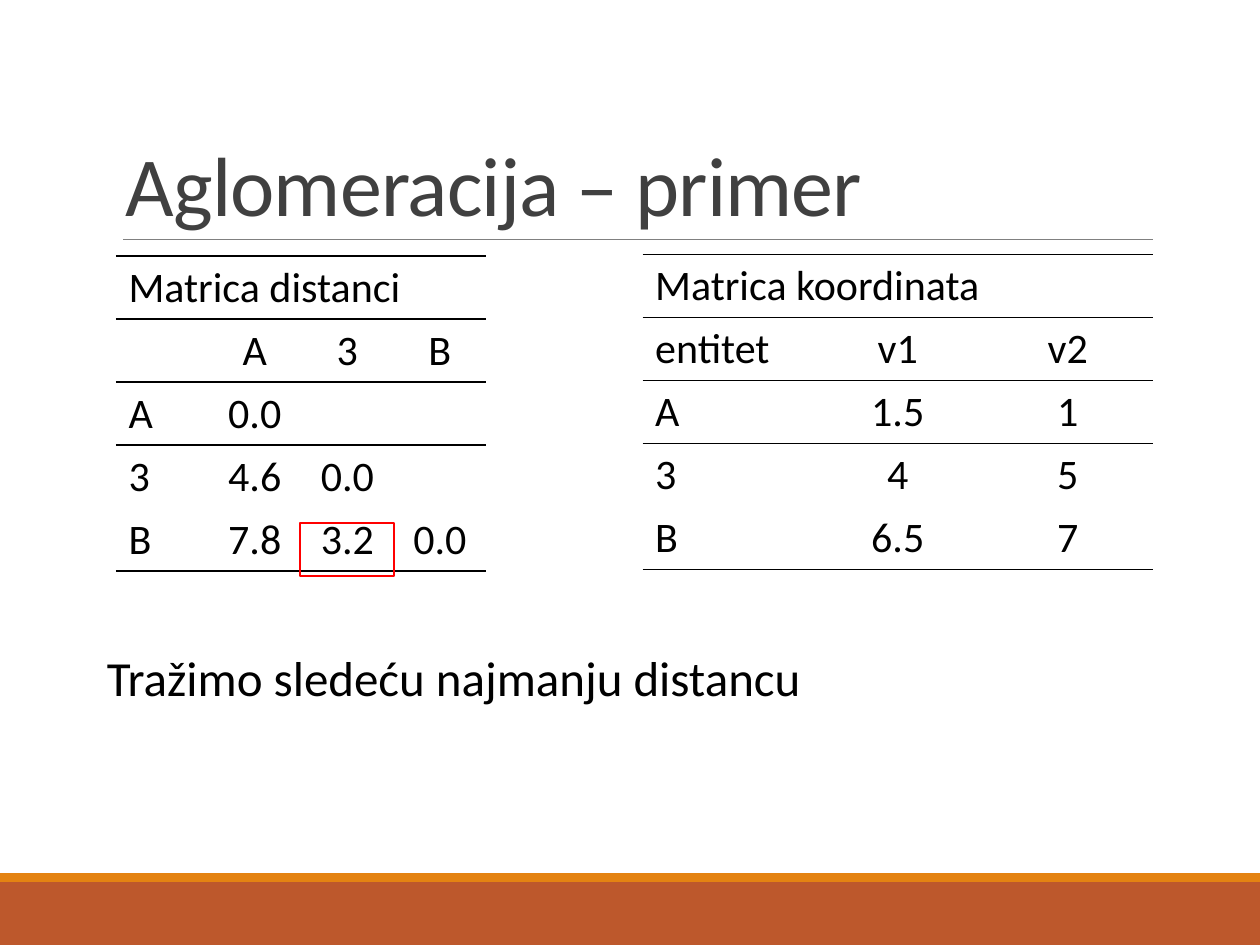
from lxml.etree import Element, SubElement
from pptx import Presentation
from pptx.dml.color import RGBColor
from pptx.enum.shapes import MSO_CONNECTOR, MSO_SHAPE
from pptx.enum.text import MSO_ANCHOR, MSO_AUTO_SIZE, PP_ALIGN
from pptx.oxml.ns import qn
from pptx.util import Inches, Pt

COLORS = {
    "text": "000000",
    "title": "404040",
    "rule": "808080",
    "band": "BD582C",
    "stripe": "E48312",
    "highlight": "FF0000",
}
FONT = "Calibri"
RULED_EDGES = {0, 1, 2, 3, 5}

DISTANCES = [
    ["Matrica distanci", "", "", ""],
    ["", "A", "3", "B"],
    ["A", "0.0", "", ""],
    ["3", "4.6", "0.0", ""],
    ["B", "7.8", "3.2", "0.0"],
]
COORDINATES = [
    ["Matrica koordinata", "", ""],
    ["entitet", "v1", "v2"],
    ["A", "1.5", "1"],
    ["3", "4", "5"],
    ["B", "6.5", "7"],
]


class SlideBuilder:
    def __init__(self, presentation):
        self.width = presentation.slide_width
        self.height = presentation.slide_height
        self.slide = presentation.slides.add_slide(presentation.slide_layouts[6])

    def place(self, left, top, width, height):
        across, down = self.width / 100, self.height / 100
        return [round(value) for value in (left * across, top * down, width * across, height * down)]

    def color(self, name):
        return RGBColor.from_string(COLORS[name])

    def add_text(self, paragraph, text, size, color="text"):
        run = paragraph.add_run()
        run.text = text
        run.font.name = FONT
        run.font.size = Pt(size)
        run.font.color.rgb = self.color(color)
        return run

    def rectangle(self, box, fill=None, line=None):
        shape = self.slide.shapes.add_shape(MSO_SHAPE.RECTANGLE, *self.place(*box))
        shape.shadow.inherit = False
        if fill:
            shape.fill.solid()
            shape.fill.fore_color.rgb = self.color(fill)
        else:
            shape.fill.background()
        if line:
            shape.line.color.rgb = self.color(line)
            shape.line.width = Pt(1.25)
        else:
            shape.line.fill.background()

    def rule(self, left, top, width):
        x, y, length, _ = self.place(left, top, width, 0)
        connector = self.slide.shapes.add_connector(MSO_CONNECTOR.STRAIGHT, x, y, x + length, y)
        connector.line.color.rgb = self.color("rule")
        connector.line.width = Pt(0.5)
        SubElement(connector._element.spPr, qn("a:effectLst"))

    def title(self, box, text):
        frame = self.slide.shapes.add_textbox(*self.place(*box)).text_frame
        frame.word_wrap = True
        frame.vertical_anchor = MSO_ANCHOR.BOTTOM
        paragraph = frame.paragraphs[0]
        paragraph.line_spacing = 0.85
        run = self.add_text(paragraph, text, 48, "title")
        run.font._element.set("spc", "-50")

    def note(self, box, text):
        frame = self.slide.shapes.add_textbox(*self.place(*box)).text_frame
        frame.word_wrap = False
        frame.auto_size = MSO_AUTO_SIZE.SHAPE_TO_FIT_TEXT
        self.add_text(frame.paragraphs[0], text, 28)

    def borders(self, cell, row):
        edges = {"L": False, "R": False, "T": row in RULED_EDGES, "B": row + 1 in RULED_EDGES}
        properties = cell._tc.get_or_add_tcPr()
        for position, (side, ruled) in enumerate(edges.items()):
            line = Element(qn(f"a:ln{side}"), w=str(Pt(1)))
            fill = SubElement(line, qn("a:solidFill" if ruled else "a:noFill"))
            if ruled:
                SubElement(fill, qn("a:srgbClr"), val=COLORS["text"])
            properties.insert(position, line)

    def table(self, box, rows):
        frame = self.slide.shapes.add_table(len(rows), len(rows[0]), *self.place(*box))
        table = frame.table
        table.first_row = table.horz_banding = False
        for row, values in enumerate(rows):
            for column, text in enumerate(values):
                cell = table.cell(row, column)
                cell.fill.background()
                cell.vertical_anchor = MSO_ANCHOR.MIDDLE
                self.borders(cell, row)
                paragraph = cell.text_frame.paragraphs[0]
                paragraph.alignment = PP_ALIGN.CENTER if column else PP_ALIGN.LEFT
                if text:
                    self.add_text(paragraph, text, 24)
        table.cell(0, 0).merge(table.cell(0, len(rows[0]) - 1))


def main():
    presentation = Presentation()
    presentation.slide_width = Inches(10)
    presentation.slide_height = Inches(7.5)
    builder = SlideBuilder(presentation)
    builder.rectangle((0, 93.33, 100, 6.67), fill="band")
    builder.rectangle((0, 92.4, 100, 0.93), fill="stripe")
    builder.rule(9.8, 25.33, 81.7)
    builder.title((9, 4.13, 82.5, 21.2), "Aglomeracija – primer")
    builder.table((9.2, 27.07, 29.4, 33.33), DISTANCES)
    builder.table((51, 26.93, 40.5, 33.33), COORDINATES)
    builder.note((7.5, 67.87, 57.7, 7.6), "Tražimo sledeću najmanju distancu")
    builder.rectangle((23.8, 55.33, 7.5, 5.6), line="highlight")
    presentation.save("out.pptx")


if __name__ == "__main__":
    main()
